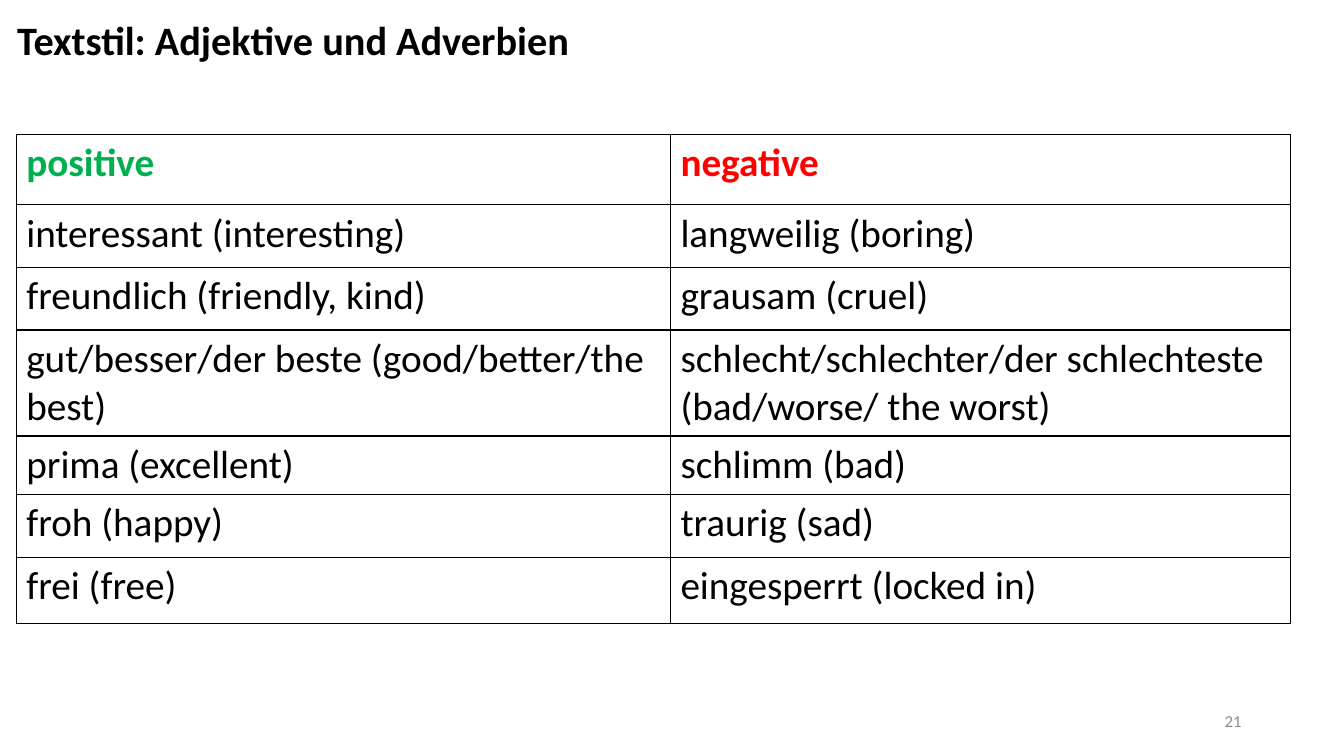
import pptx
import pptx.dml.color
import pptx.enum.text
import pptx.oxml
import pptx.oxml.ns
import pptx.util

Pt = pptx.util.Pt
RGB = pptx.dml.color.RGBColor
ALIGN = pptx.enum.text.PP_ALIGN
MIDDLE = pptx.enum.text.MSO_ANCHOR.MIDDLE

BLACK = RGB(0x00, 0x00, 0x00)
GREEN = RGB(0x00, 0xB0, 0x50)
RED = RGB(0xFF, 0x00, 0x00)
GRAY = RGB(0x8C, 0x8C, 0x8C)

WORDS = [
    ("positive", "negative"),
    ("interessant (interesting)", "langweilig (boring)"),
    ("freundlich (friendly, kind)", "grausam (cruel)"),
    ("gut/besser/der beste (good/better/the best)",
     "schlecht/schlechter/der schlechteste (bad/worse/ the worst)"),
    ("prima (excellent)", "schlimm (bad)"),
    ("froh (happy)", "traurig (sad)"),
    ("frei (free)", "eingesperrt (locked in)"),
]
WIDTHS = [467.3, 442.8]
HEIGHTS = [50.4, 44.6, 44.9, 75.8, 41.5, 45.2, 47.5]


class Page:
    """Holds the style and the current slide."""

    font = "Calibri"

    def __init__(self, deck):
        self.slide = deck.slides.add_slide(deck.slide_layouts[5])

    def label(self, frame, text, size, color, bold=False, align=ALIGN.LEFT):
        frame.text = text
        frame.word_wrap = True
        para = frame.paragraphs[0]
        para.alignment = align
        font = para.runs[0].font
        font.name, font.size, font.bold = self.font, Pt(size), bold
        font.color.rgb = color

    def title(self, text, left, top, width, height):
        shape = self.slide.shapes.title
        shape.left, shape.top = Pt(left), Pt(top)
        shape.width, shape.height = Pt(width), Pt(height)
        self.label(shape.text_frame, text, 28.8, BLACK, bold=True)
        shape.text_frame.vertical_anchor = MIDDLE
        shape.text_frame.paragraphs[0].line_spacing = 0.9

    def number(self, text, left, top, width, height):
        box = self.slide.shapes.add_textbox(Pt(left), Pt(top), Pt(width), Pt(height))
        self.label(box.text_frame, text, 12, GRAY, align=ALIGN.RIGHT)
        box.text_frame.vertical_anchor = MIDDLE

    def border(self, cell):
        props = cell._tc.get_or_add_tcPr()
        space = pptx.oxml.ns.nsdecls("a")
        for side in "LRTB":
            props.append(pptx.oxml.parse_xml(
                f'<a:ln{side} {space} w="{Pt(1)}"><a:solidFill>'
                f'<a:srgbClr val="{BLACK}"/></a:solidFill></a:ln{side}>'))

    def table(self, rows, left, top, widths, heights):
        grid = self.slide.shapes.add_table(
            len(rows), len(widths), Pt(left), Pt(top),
            Pt(sum(widths)), Pt(sum(heights))).table
        grid.horz_banding = False
        for col, width in zip(grid.columns, widths):
            col.width = Pt(width)
        for row, height in zip(grid.rows, heights):
            row.height = Pt(height)
        for r, row in enumerate(rows):
            colors = (GREEN, RED) if r == 0 else (BLACK, BLACK)
            for c, (text, color) in enumerate(zip(row, colors)):
                cell = grid.cell(r, c)
                self.border(cell)
                cell.fill.background()
                self.label(cell.text_frame, text, 28, color, bold=r == 0)


def main():
    deck = pptx.Presentation()
    deck.slide_width, deck.slide_height = Pt(960), Pt(540)
    page = Page(deck)
    page.title("Textstil: Adjektive und Adverbien", 5, 6.5, 888.5, 47.5)
    page.number("21", 678, 500.5, 216, 28.8)
    page.table(WORDS, 11.6, 95.8, WIDTHS, HEIGHTS)
    deck.save("out.pptx")


if __name__ == "__main__":
    main()
